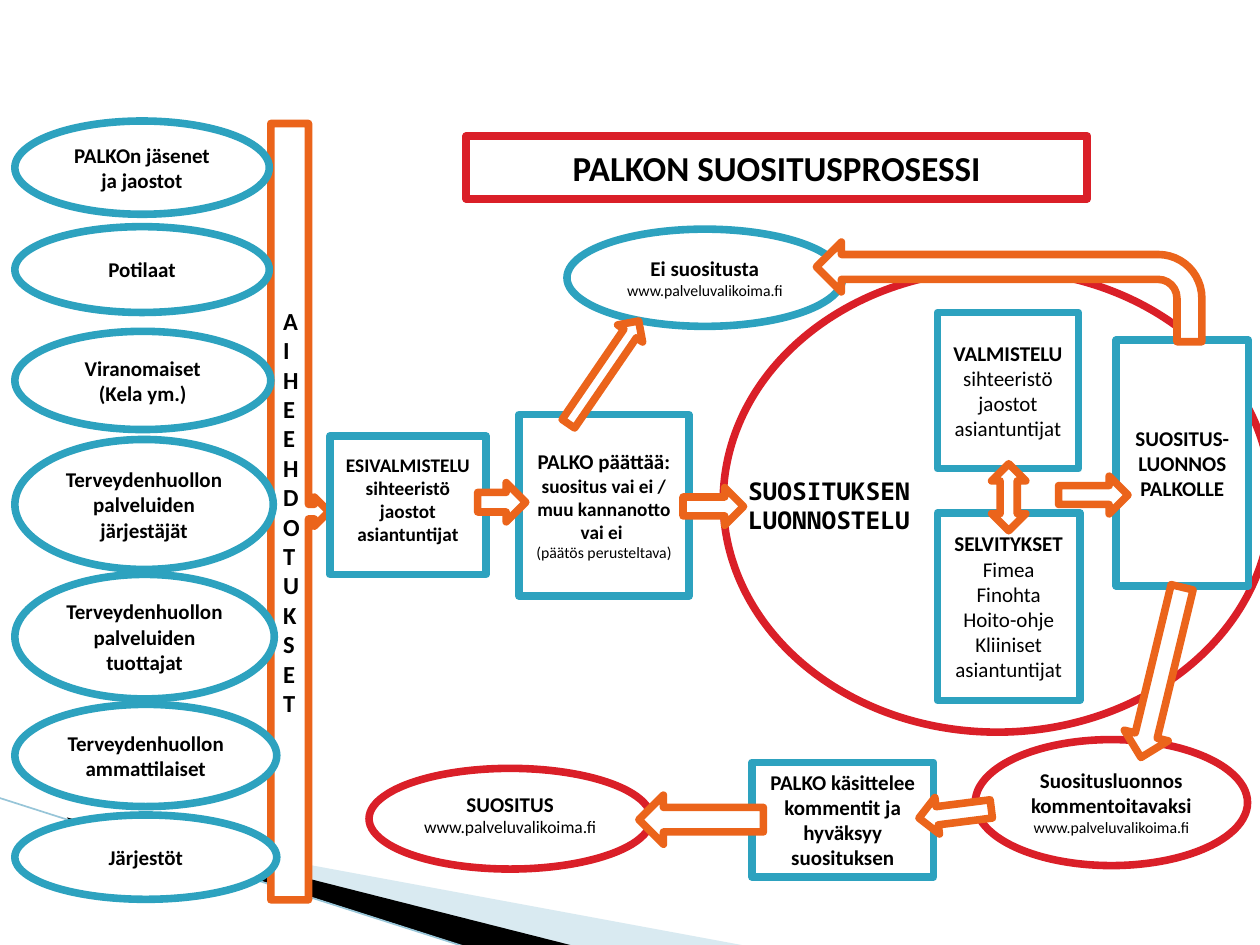
from lxml import etree
from pptx import Presentation
from pptx.dml.color import RGBColor
from pptx.enum.shapes import MSO_CONNECTOR, MSO_SHAPE
from pptx.enum.text import MSO_ANCHOR, PP_ALIGN
from pptx.oxml.ns import qn
from pptx.util import Cm, Pt

WHITE = RGBColor(0xFF, 0xFF, 0xFF)
BLACK = RGBColor(0x00, 0x00, 0x00)
BLUE = RGBColor(0x2D, 0xA2, 0xBF)
RED = RGBColor(0xDA, 0x1F, 0x28)
ORANGE = RGBColor(0xEB, 0x64, 0x1B)
PALE = RGBColor(0xA0, 0xCB, 0xDC)
THIN = RGBColor(0x97, 0xC5, 0xD8)
URL = "www.palveluvalikoima.fi"

prs = Presentation()
prs.slide_width, prs.slide_height = Cm(25.4), Cm(19.05)
s = prs.slides.add_slide(prs.slide_layouts[6])


def add_box(kind, box, color):
    sp = s.shapes.add_shape(kind, *[Cm(v) for v in box])
    sp.shadow.inherit = False
    sp.fill.solid()
    sp.fill.fore_color.rgb = WHITE
    sp.line.color.rgb = color
    sp.line.width = Pt(4.33)
    return sp


def write(sp, paragraphs, align=PP_ALIGN.CENTER, font="Calibri"):
    """Each paragraph is a list of (text, size, bold) runs."""
    tf = sp.text_frame
    tf.word_wrap = True
    for i, runs in enumerate(paragraphs):
        p = tf.paragraphs[0] if i == 0 else tf.add_paragraph()
        p.alignment = align
        for text, size, bold in runs:
            r = p.add_run()
            r.text = text
            r.font.name = font
            r.font.size = Pt(size)
            r.font.bold = bold
            r.font.color.rgb = BLACK


# Background wedges and line
wedges = [
    (PALE, [(1.4, 16.54), (15.11, 19.08), (11.58, 19.08), (1.4, 16.51)]),
    (BLACK, [(1.35, 16.48), (11.61, 19.08), (9.45, 19.1), (1.37, 16.51)]),
]
for color, points in wedges:
    points = [(Cm(x), Cm(y)) for x, y in points]
    fb = s.shapes.build_freeform(*points[0])
    fb.add_line_segments(points[1:])
    sp = fb.convert_to_shape()
    sp.shadow.inherit = False
    sp.fill.solid()
    sp.fill.fore_color.rgb = color
    sp.line.fill.background()
    if color == PALE:
        clr = sp.fill._xPr.find(qn("a:solidFill"))[0]
        etree.SubElement(clr, qn("a:alpha")).set("val", "40000")

line = s.shapes.add_connector(MSO_CONNECTOR.STRAIGHT, Cm(-0.03), Cm(16.08), Cm(9.42), Cm(19.1))
line.line.color.rgb = THIN
line.line.width = Pt(0.95)
etree.SubElement(line._element.spPr, qn("a:effectLst"))

# Vertical bar collecting the proposals
sp = add_box(MSO_SHAPE.RIGHT_ARROW_CALLOUT, (5.46, 2.49, 1.17, 15.65), ORANGE)
sp.adjustments[3] = 0.65
write(sp, [[("AIHEEHDOTUKSET", 14, True)]], PP_ALIGN.LEFT)

# Sources of proposals: top, width, height
sources = [
    ("PALKOn jäsenet ja jaostot", 2.44, 5.13, 1.88),
    ("Potilaat", 4.57, 5.13, 1.73),
    ("Viranomaiset (Kela ym.)", 6.68, 5.16, 1.98),
    ("Terveydenhuollon palveluiden järjestäjät", 8.86, 5.21, 2.62),
    ("Terveydenhuollon palveluiden tuottajat", 11.58, 5.23, 2.51),
    ("Terveydenhuollon ammattilaiset", 14.2, 5.28, 2.06),
    ("Järjestöt", 16.43, 5.28, 1.7),
]
for text, top, width, height in sources:
    sp = add_box(MSO_SHAPE.OVAL, (0.3, top, width, height), BLUE)
    write(sp, [[(text, 12, True)]])

# Drafting circle
add_box(MSO_SHAPE.OVAL, (14.58, 5.44, 11.05, 9.32), RED)

# Process steps: shape, position, colour, paragraphs, bottom inset
OVAL, RECT = MSO_SHAPE.OVAL, MSO_SHAPE.RECTANGLE
steps = [
    (OVAL, (11.43, 4.62, 5.56, 1.96), BLUE,
     [[("Ei suositusta", 12, True)], [(URL, 9, False)]], 0.13),
    (OVAL, (19.66, 14.91, 5.49, 2.54), RED,
     [[("Suositusluonnos kommentoitavaksi ", 12, True), (URL, 9, False)]], 0.13),
    (RECT, (18.9, 10.34, 2.87, 3.78), BLUE,
     [[("SELVITYKSET", 12, True)]] + [[(t, 12, False)] for t in (
         "Fimea", "Finohta", "Hoito-ohje", "Kliiniset asiantuntijat")], 0.13),
    (RECT, (18.9, 6.3, 2.84, 3.15), BLUE,
     [[("VALMISTELU", 12, True)]] + [[(t, 12, False)] for t in (
         "sihteeristö", "jaostot", "asiantuntijat")], 0.13),
    (RECT, (10.46, 8.36, 3.43, 3.66), BLUE,
     [[("PALKO päättää: ", 12, True),
       ("suositus vai ei / muu kannanotto vai ei ", 11, True)],
      [("(päätös perusteltava)", 9, False)]], 0.13),
    (RECT, (6.65, 8.79, 3.15, 2.79), BLUE,
     [[(t, 11, True)] for t in (
         "ESIVALMISTELU", "sihteeristö", "jaostot", "asiantuntijat")], 0.36),
    (RECT, (22.5, 6.86, 2.67, 4.95), BLUE,
     [[("SUOSITUS-LUONNOS PALKOLLE", 12, True)]], 0.13),
    (RECT, (15.16, 15.37, 3.66, 2.31), BLUE,
     [[("PALKO käsittelee kommentit ja hyväksyy suosituksen", 12, True)]], 0.13),
    (OVAL, (7.44, 15.49, 5.69, 2.03), RED,
     [[("SUOSITUS ", 12, True), (URL, 10, False)]], 0.3),
    (RECT, (9.4, 2.74, 12.52, 1.27), RED,
     [[("PALKON SUOSITUSPROSESSI", 20, True)]], 0.13),
]
for kind, box, color, paragraphs, bottom in steps:
    sp = add_box(kind, box, color)
    write(sp, paragraphs)
    sp.text_frame.margin_bottom = Cm(bottom)

# Arrows between the steps: shape, position, rotation
arrows = [
    (MSO_SHAPE.RIGHT_ARROW, (9.63, 9.73, 0.97, 0.79), 0),
    (MSO_SHAPE.RIGHT_ARROW, (13.77, 9.83, 1.22, 0.76), 0),
    (MSO_SHAPE.UP_DOWN_ARROW, (19.99, 9.35, 0.69, 1.35), 0),
    (MSO_SHAPE.RIGHT_ARROW, (21.34, 9.6, 1.4, 0.76), 0),
    (MSO_SHAPE.DOWN_ARROW, (22.96, 11.79, 0.91, 3.53), 13.6),
    (MSO_SHAPE.LEFT_ARROW, (18.52, 16.03, 1.47, 0.74), 352.8),
    (MSO_SHAPE.DOWN_ARROW, (11.86, 6.25, 0.61, 2.51), 214.4),
    (MSO_SHAPE.LEFT_ARROW, (12.88, 16.03, 2.51, 0.99), 0),
]
for kind, box, angle in arrows:
    add_box(kind, box, ORANGE).rotation = angle

# Bent arrow back to "Ei suositusta"
sp = add_box(MSO_SHAPE.BENT_ARROW, (16.46, 4.88, 7.77, 2.01), ORANGE)
sp._element.spPr.xfrm.set("flipH", "1")

# Label inside the drafting circle
tb = s.shapes.add_textbox(Cm(14.83), Cm(9.47), Cm(4.29), Cm(1.45))
tb.text_frame.vertical_anchor = MSO_ANCHOR.TOP
write(tb, [[("SUOSITUKSEN LUONNOSTELU", 14, True)]], PP_ALIGN.LEFT, "Noto Sans Mono")

prs.save("out.pptx")
